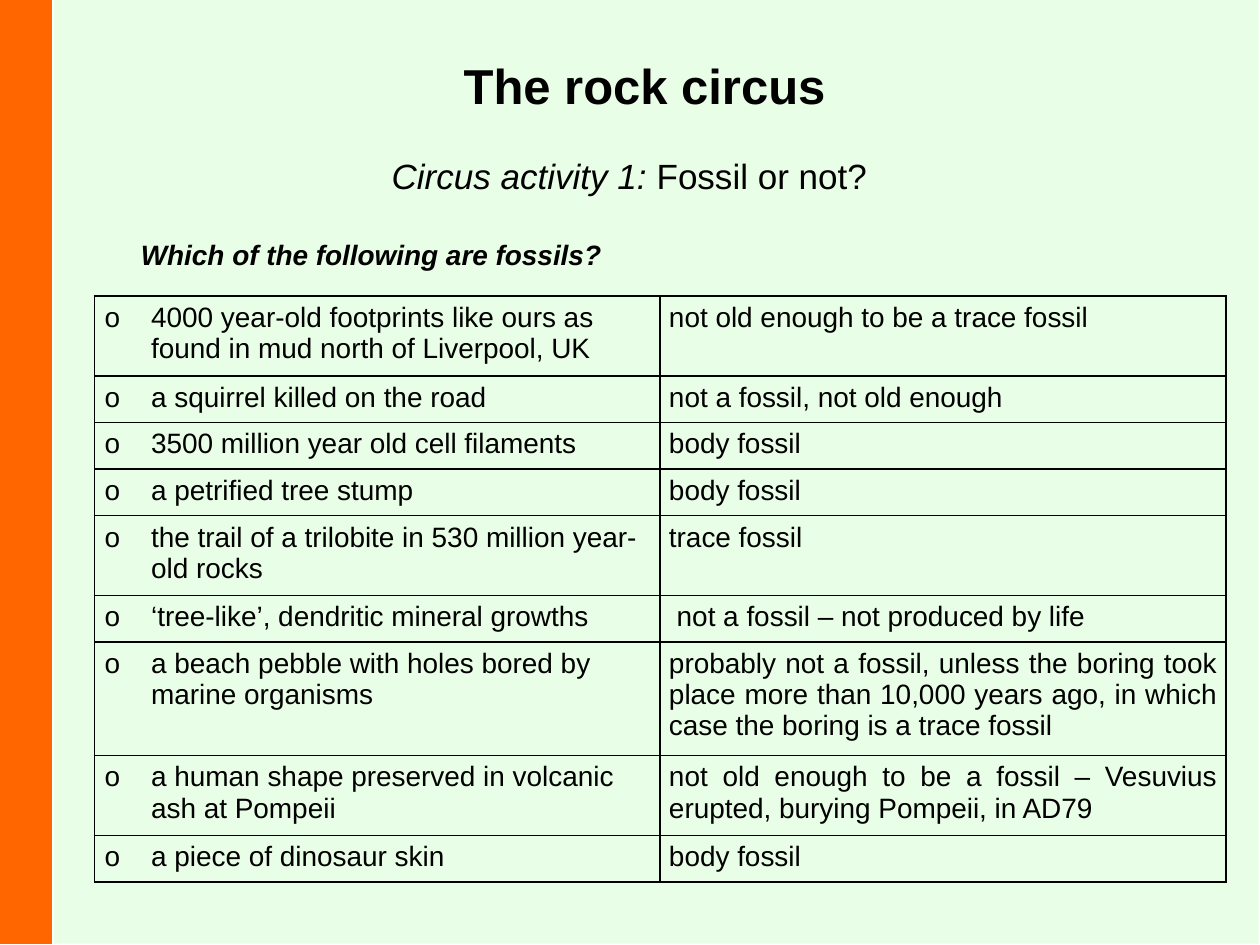
from lxml.etree import SubElement
from pptx import Presentation
from pptx.dml.color import RGBColor
from pptx.enum.shapes import MSO_SHAPE
from pptx.enum.text import PP_ALIGN
from pptx.oxml.ns import qn
from pptx.util import Inches, Pt

BLACK, ORANGE, MINT = "000000", "FF6600", "E9FEE6"

# left, top, width, height, fill
PANELS = [
    (0.43, 0, 9.56, 7.49, MINT),
    (0, 0, 0.41, 7.49, ORANGE),
]

# box, alignment, runs of (text, font format)
HEADINGS = [
    ((1.02, 0.39, 8.19, 0.53), PP_ALIGN.CENTER,
     [("The rock circus", {"size": Pt(28), "bold": True})]),
    ((0.94, 1.18, 8.11, 0.43), PP_ALIGN.CENTER,
     [("Circus activity 1:", {"size": Pt(20), "italic": True}),
      (" Fossil or not?", {"size": Pt(20)})]),
    ((1.02, 1.84, 5.27, 0.36), PP_ALIGN.LEFT,
     [("Which of the following are fossils?",
       {"size": Pt(16), "bold": True, "italic": True})]),
]

# item, answer, lines of text in the row
FOSSILS = [
    ("4000 year-old footprints like ours as found in mud north of Liverpool, UK",
     "not old enough to be a trace fossil", 2),
    ("a squirrel killed on the road", "not a fossil, not old enough", 1),
    ("3500 million year old cell filaments", "body fossil", 1),
    ("a petrified tree stump", "body fossil", 1),
    ("the trail of a trilobite in 530 million year-old rocks", "trace fossil", 2),
    ("‘tree-like’, dendritic mineral growths",
     " not a fossil – not produced by life", 1),
    ("a beach pebble with holes bored by marine organisms",
     "probably not a fossil, unless the boring took place more than 10,000 years "
     "ago, in which case the boring is a trace fossil", 3),
    ("a human shape preserved in volcanic ash at Pompeii",
     "not old enough to be a fossil – Vesuvius erupted, burying Pompeii, in AD79", 2),
    ("a piece of dinosaur skin", "body fossil", 1),
]
ROW_HEIGHTS = {1: 0.37, 2: 0.63, 3: 0.9}
TABLE_LEFT, TABLE_TOP, COLUMN_WIDTH = 0.75, 2.35, 4.49


def rgb(value):
    return RGBColor.from_string(value)


def add_run(p, text, font_format):
    r = p.add_run()
    r.text = text
    r.font.name = "Arial"
    r.font.color.rgb = rgb(BLACK)
    for name, value in font_format.items():
        setattr(r.font, name, value)


def add_bullet(p):
    pPr = p._p.get_or_add_pPr()
    pPr.set("marL", str(Inches(0.38)))
    pPr.set("indent", str(Inches(-0.37)))
    SubElement(SubElement(pPr, qn("a:buClr")), qn("a:srgbClr"), val=BLACK)
    SubElement(pPr, qn("a:buFont"), typeface="Arial")
    SubElement(pPr, qn("a:buChar"), char="o")


def add_borders(cell):
    tcPr = cell._tc.get_or_add_tcPr()
    for side in ("lnL", "lnR", "lnT", "lnB"):
        line = SubElement(tcPr, qn(f"a:{side}"), w=str(Pt(0.96)))
        SubElement(SubElement(line, qn("a:solidFill")), qn("a:srgbClr"), val=BLACK)


def fill_cell(cell, text, is_item):
    cell.margin_left = cell.margin_right = Inches(0.07)
    cell.margin_top = cell.margin_bottom = Inches(0.05)
    add_borders(cell)
    cell.fill.background()
    p = cell.text_frame.paragraphs[0]
    if is_item:
        add_bullet(p)
    else:
        p.alignment = PP_ALIGN.JUSTIFY
    add_run(p, text, {"size": Pt(16)})


prs = Presentation()
prs.slide_width, prs.slide_height = Inches(10), Inches(7.5)
s = prs.slides.add_slide(prs.slide_layouts[6])

for *box, color in PANELS:
    sp = s.shapes.add_shape(MSO_SHAPE.RECTANGLE, *map(Inches, box))
    sp.shadow.inherit = False
    sp.fill.solid()
    sp.fill.fore_color.rgb = rgb(color)
    if color == ORANGE:
        sp.line.color.rgb = rgb(color)
        sp.line.width = Pt(0.75)
    else:
        sp.line.fill.background()

for box, alignment, runs in HEADINGS:
    tf = s.shapes.add_textbox(*map(Inches, box)).text_frame
    tf.word_wrap = True
    p = tf.paragraphs[0]
    p.alignment = alignment
    for text, font_format in runs:
        add_run(p, text, font_format)

heights = [ROW_HEIGHTS[lines] for *_, lines in FOSSILS]
table = s.shapes.add_table(
    len(FOSSILS), 2, Inches(TABLE_LEFT), Inches(TABLE_TOP),
    Inches(2 * COLUMN_WIDTH), Inches(sum(heights))).table
table.first_row = table.horz_banding = False
for column in table.columns:
    column.width = Inches(COLUMN_WIDTH)
for row, height, (item, answer, _) in zip(table.rows, heights, FOSSILS):
    row.height = Inches(height)
    fill_cell(row.cells[0], item, True)
    fill_cell(row.cells[1], answer, False)

prs.save("out.pptx")
